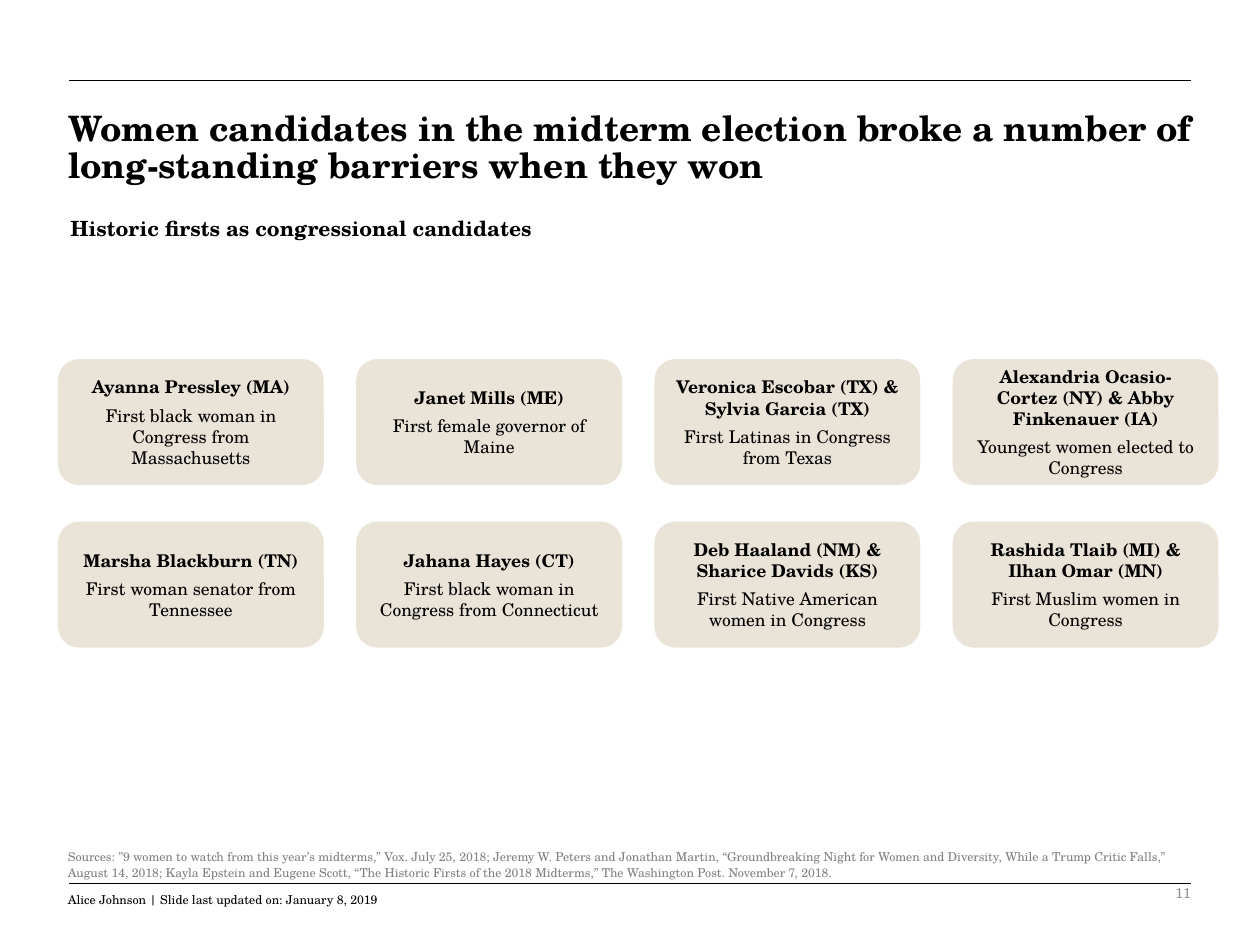
from dataclasses import dataclass

from lxml import etree
from pptx import Presentation
from pptx import util as u
from pptx.dml.color import RGBColor
from pptx.enum import shapes, text
from pptx.oxml import ns


@dataclass(frozen=True)
class Theme:
    font: str = "TeX Gyre Schola"
    ink: str = "000000"
    source: str = "808080"
    number: str = "8C8C8C"
    card: str = "EAE3D8"
    title_size: int = 20
    heading_size: int = 12
    card_size: int = 10
    number_size: int = 8
    note_size: int = 7
    rule_width: float = 0.5


THEME = Theme()
COLUMNS, ROWS = 100, 75
SLIDE_WIDTH, SLIDE_HEIGHT = u.Inches(10), u.Inches(7.5)

CARD_LEFT, CARD_TOP = 4.6, 28.5
CARD_WIDTH, CARD_HEIGHT = 21.1, 10
CARD_STEP_X, CARD_STEP_Y = 23.67, 12.9

CARDS = [
    [
        ("Ayanna Pressley (MA)", "First black woman in Congress from Massachusetts"),
        ("Janet Mills (ME)", "First female governor of Maine"),
        ("Veronica Escobar (TX) & Sylvia Garcia (TX)", "First Latinas in Congress from Texas"),
        ("Alexandria Ocasio-Cortez (NY) & Abby Finkenauer (IA)", "Youngest women elected to Congress"),
    ],
    [
        ("Marsha Blackburn (TN)", "First woman senator from Tennessee"),
        ("Jahana Hayes (CT)", "First black woman in Congress from Connecticut"),
        ("Deb Haaland (NM) & Sharice Davids (KS)", "First Native American women in Congress"),
        ("Rashida Tlaib (MI) & Ilhan Omar (MN)", "First Muslim women in Congress"),
    ],
]

SOURCES = (
    "Sources: ”9 women to watch from this year’s midterms,” Vox. July 25, 2018; "
    "Jeremy W. Peters and Jonathan Martin, “Groundbreaking Night for Women and Diversity, "
    "While a Trump Critic Falls,” August 14, 2018; Kayla Epstein and Eugene Scott, "
    "“The Historic Firsts of the 2018 Midterms,” The Washington Post. November 7, 2018."
)


def across(columns):
    return round(SLIDE_WIDTH * columns / COLUMNS)


def down(rows):
    return round(SLIDE_HEIGHT * rows / ROWS)


def area(left, top, width, height):
    return across(left), down(top), across(width), down(height)


def format_para(para, size, color=THEME.ink, bold=False, align=text.PP_ALIGN.LEFT, spacing=1.0):
    para.alignment = align
    para.line_spacing = spacing
    para.font.name = THEME.font
    para.font.size = u.Pt(size)
    para.font.bold = bold
    para.font.color.rgb = RGBColor.from_string(color)


def add_rule(page, row):
    rule = page.shapes.add_connector(
        shapes.MSO_CONNECTOR.STRAIGHT, across(5.5), down(row), across(94.5), down(row)
    )
    rule.line.color.rgb = RGBColor.from_string(THEME.ink)
    rule.line.width = u.Pt(THEME.rule_width)
    etree.SubElement(rule._element.spPr, ns.qn("a:effectLst"))


def set_title(page, words):
    title = page.shapes.title
    title.left, title.top, title.width, title.height = area(4.4, 8.3, 92, 7)
    frame = title.text_frame
    frame.text = words
    frame.auto_size = text.MSO_AUTO_SIZE.NONE
    frame.vertical_anchor = text.MSO_ANCHOR.TOP
    format_para(frame.paragraphs[0], THEME.title_size, bold=True, spacing=0.9)


def add_label(page, words, place, size, anchor=text.MSO_ANCHOR.TOP, **style):
    frame = page.shapes.add_textbox(*area(*place)).text_frame
    frame.word_wrap = True
    frame.vertical_anchor = anchor
    frame.text = words
    format_para(frame.paragraphs[0], size, **style)


def add_card(page, column, row, name, achievement):
    card = page.shapes.add_shape(
        shapes.MSO_SHAPE.ROUNDED_RECTANGLE,
        *area(
            CARD_LEFT + column * CARD_STEP_X,
            CARD_TOP + row * CARD_STEP_Y,
            CARD_WIDTH,
            CARD_HEIGHT,
        ),
    )
    card.shadow.inherit = False
    card.fill.solid()
    card.fill.fore_color.rgb = RGBColor.from_string(THEME.card)
    card.line.fill.background()
    frame = card.text_frame
    frame.word_wrap = True
    frame.vertical_anchor = text.MSO_ANCHOR.MIDDLE
    frame.text = f"{name}\n{achievement}"
    for para, bold in zip(frame.paragraphs, (True, False)):
        format_para(para, THEME.card_size, bold=bold, align=text.PP_ALIGN.CENTER)
        para.space_after = u.Pt(4)


def main():
    deck = Presentation()
    deck.slide_width, deck.slide_height = SLIDE_WIDTH, SLIDE_HEIGHT
    page = deck.slides.add_slide(deck.slide_layouts.get_by_name("Title Only"))

    for row in (70.1, 6.4):
        add_rule(page, row)
    set_title(
        page,
        "Women candidates in the midterm election broke a number of "
        "long-standing barriers when they won",
    )
    add_label(
        page,
        "Historic firsts as congressional candidates",
        (4.6, 16.6, 90, 3),
        THEME.heading_size,
        bold=True,
    )
    for row, cards in enumerate(CARDS):
        for column, (name, achievement) in enumerate(cards):
            add_card(page, column, row, name, achievement)
    add_label(
        page, SOURCES, (4.4, 66.8, 90.2, 2.1), THEME.note_size, color=THEME.source, spacing=1.1
    )
    add_label(
        page,
        "Alice Johnson | Slide last updated on: January 8, 2019",
        (4.4, 70.2, 33.3, 3.7),
        THEME.note_size,
        spacing=1.1,
    )
    add_label(
        page,
        "11",
        (70.6, 68.9, 24.9, 4),
        THEME.number_size,
        anchor=text.MSO_ANCHOR.MIDDLE,
        color=THEME.number,
        align=text.PP_ALIGN.RIGHT,
    )
    deck.save("out.pptx")


if __name__ == "__main__":
    main()
